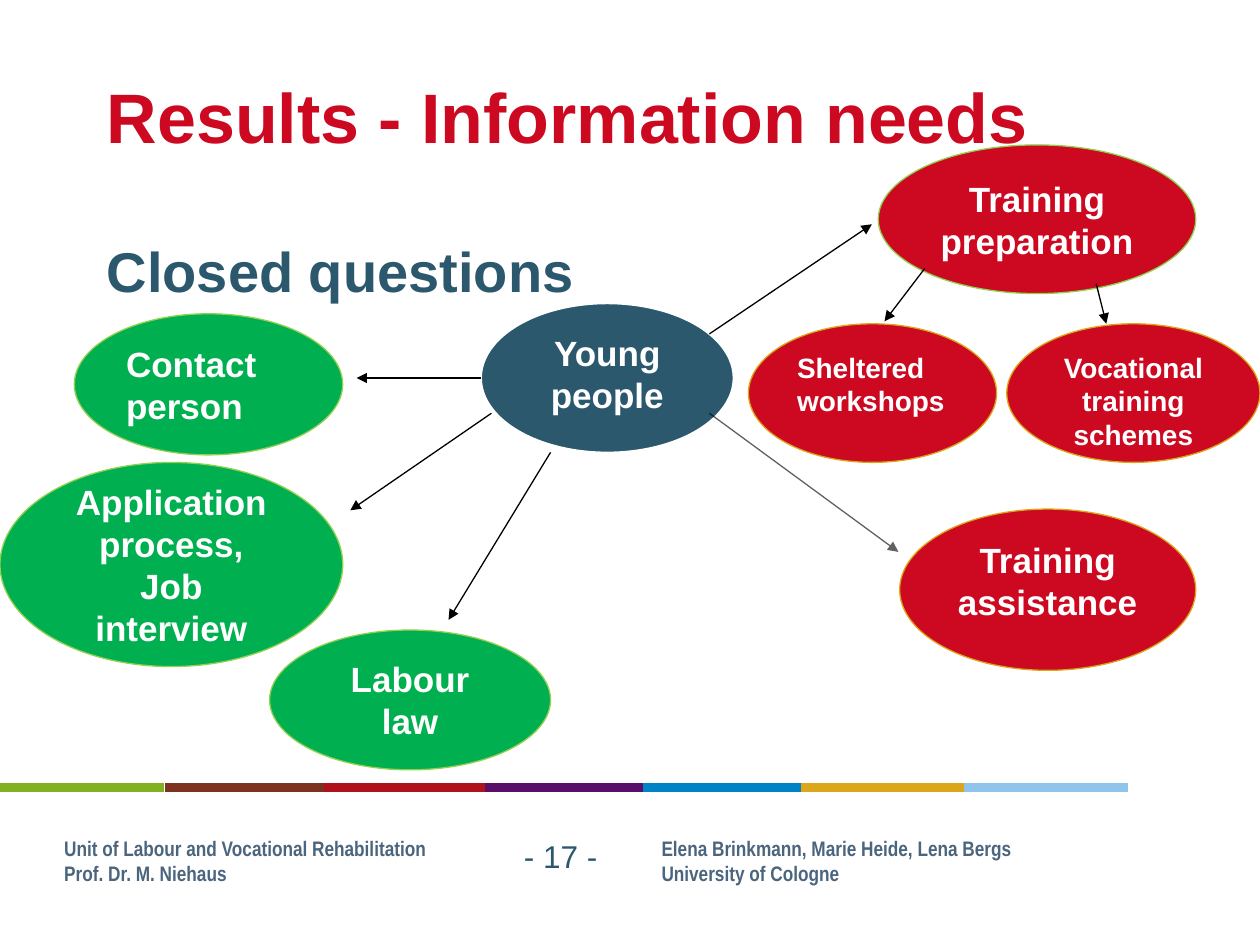
"""Build the slide on young people's information needs from closed questions."""
from lxml.etree import SubElement
from pptx import Presentation
from pptx.dml.color import RGBColor
from pptx.enum.shapes import MSO_CONNECTOR, MSO_SHAPE
from pptx.enum.text import MSO_ANCHOR as ANCHOR, PP_ALIGN as ALIGN
from pptx.oxml.ns import qn
from pptx.util import Inches, Pt

COLORS = {
    "red": "CD0921", "teal": "2B586C", "green": "00B050", "lime": "92D050",
    "gold": "DBA619", "slate": "4A657D", "white": "FFFFFF", "black": "000000",
}
STRIPE = [
    (0, "83AF23"), (1.31, "7D321D"), (2.57, "AF111D"), (3.85, "590F68"),
    (5.1, "0082C6"), (6.36, "DBA619"), (7.65, "91C4EA"),
]


def write(shape, text, size=20, color="white", font="Arial", bold=True,
          align=ALIGN.LEFT, anchor=ANCHOR.TOP, wrap=True):
    frame = shape.text_frame
    frame.word_wrap = wrap
    frame.vertical_anchor = anchor
    frame.text = text
    for paragraph in frame.paragraphs:
        paragraph.alignment = align
        paragraph.font.name = font
        paragraph.font.size = Pt(size)
        paragraph.font.bold = bold
        paragraph.font.color.rgb = RGBColor.from_string(COLORS[color])
    return frame


def draw_line(start, end, color, width):
    line = slide.shapes.add_connector(
        MSO_CONNECTOR.STRAIGHT, *[Inches(v) for v in (*start, *end)])
    line.line.color.rgb = RGBColor.from_string(color)
    line.line.width = Pt(width)
    SubElement(line._element.spPr, qn("a:effectLst"))
    return line.line._get_or_add_ln()


deck = Presentation()
deck.slide_width, deck.slide_height = Inches(10), Inches(7.5)
slide = deck.slides.add_slide(deck.slide_layouts[6])

for left, color in STRIPE:
    draw_line((left, 6.25), (left + 1.3, 6.25), color, 5.5)

for left, credit in [
    (0.51, "Unit of Labour and Vocational Rehabilitation\nProf. Dr. M. Niehaus"),
    (5.25, "Elena Brinkmann, Marie Heide, Lena Bergs\nUniversity of Cologne"),
]:
    footer = slide.shapes.add_shape(
        MSO_SHAPE.RECTANGLE, Inches(left), Inches(6.58), Inches(1.58), Inches(0.5))
    footer.shadow.inherit = False
    footer.fill.solid()
    footer.fill.fore_color.rgb = RGBColor.from_string(COLORS["white"])
    footer.line.fill.background()
    write(footer, credit, size=12, color="slate", font="Arial Narrow",
          wrap=False).margin_left = 0

page_number = slide.shapes.add_textbox(Inches(4.06), Inches(6.59), Inches(1.1), Inches(0.4))
write(page_number, "- 17 -", size=18, color="teal", bold=False)

title = slide.shapes.add_textbox(Inches(0.75), Inches(0.29), Inches(8.5), Inches(1.25))
write(title, "Results - Information needs", size=40, color="red", anchor=ANCHOR.MIDDLE)

subtitle = slide.shapes.add_textbox(Inches(0.75), Inches(1.78), Inches(8.5), Inches(0.79))
write(subtitle, "Closed questions", size=32, color="teal").margin_top = Inches(0.1)

CENTER, LEFT, MIDDLE, TOP = ALIGN.CENTER, ALIGN.LEFT, ANCHOR.MIDDLE, ANCHOR.TOP
for topic, box, fill, outline, size, align, anchor in [
    ("Labour law", (2.14, 5, 2.23, 1.11), "green", "lime", 20, CENTER, MIDDLE),
    ("Contact person", (0.59, 2.49, 2.13, 1.12), "green", "lime", 20, LEFT, MIDDLE),
    ("Sheltered workshops", (5.94, 2.57, 1.97, 1.1), "red", "gold", 16, LEFT, TOP),
    ("Application process,\nJob interview", (0, 3.67, 2.72, 1.62),
     "green", "lime", 20, CENTER, MIDDLE),
    ("Training preparation", (6.97, 1.15, 2.52, 1.18), "red", "lime", 20, CENTER, MIDDLE),
    ("Training assistance", (7.14, 4.04, 2.35, 1.28), "red", "gold", 20, CENTER, TOP),
    ("Vocational training schemes", (7.99, 2.57, 2.01, 1.1),
     "red", "gold", 16, CENTER, TOP),
    ("Young people", (3.82, 2.41, 2, 1.18), "teal", "white", 20, CENTER, TOP),
]:
    bubble = slide.shapes.add_shape(MSO_SHAPE.OVAL, *[Inches(v) for v in box])
    bubble.shadow.inherit = False
    bubble.fill.solid()
    bubble.fill.fore_color.rgb = RGBColor.from_string(COLORS[fill])
    bubble.line.color.rgb = RGBColor.from_string(COLORS[outline])
    bubble.line.width = Pt(0.75)
    write(bubble, topic, size=size, align=align, anchor=anchor)

for start, end, opacity in [
    ((5.63, 2.65), (6.92, 1.78), 100),
    ((8.7, 2.25), (8.78, 2.57), 100),
    ((5.63, 3.28), (7.13, 4.38), 61),
    ((3.82, 3), (2.83, 3), 100),
    ((3.9, 3.28), (2.78, 4.05), 100),
    ((4.37, 3.59), (3.56, 4.92), 100),
    ((7.34, 2.13), (7.02, 2.55), 100),
]:
    arrow = draw_line(start, end, COLORS["black"], 0.75)
    SubElement(arrow, qn("a:tailEnd"), type="triangle")
    if opacity < 100:
        ink = arrow.find(".//" + qn("a:srgbClr"))
        SubElement(ink, qn("a:alpha"), val=str(opacity * 1000))

deck.save("out.pptx")
